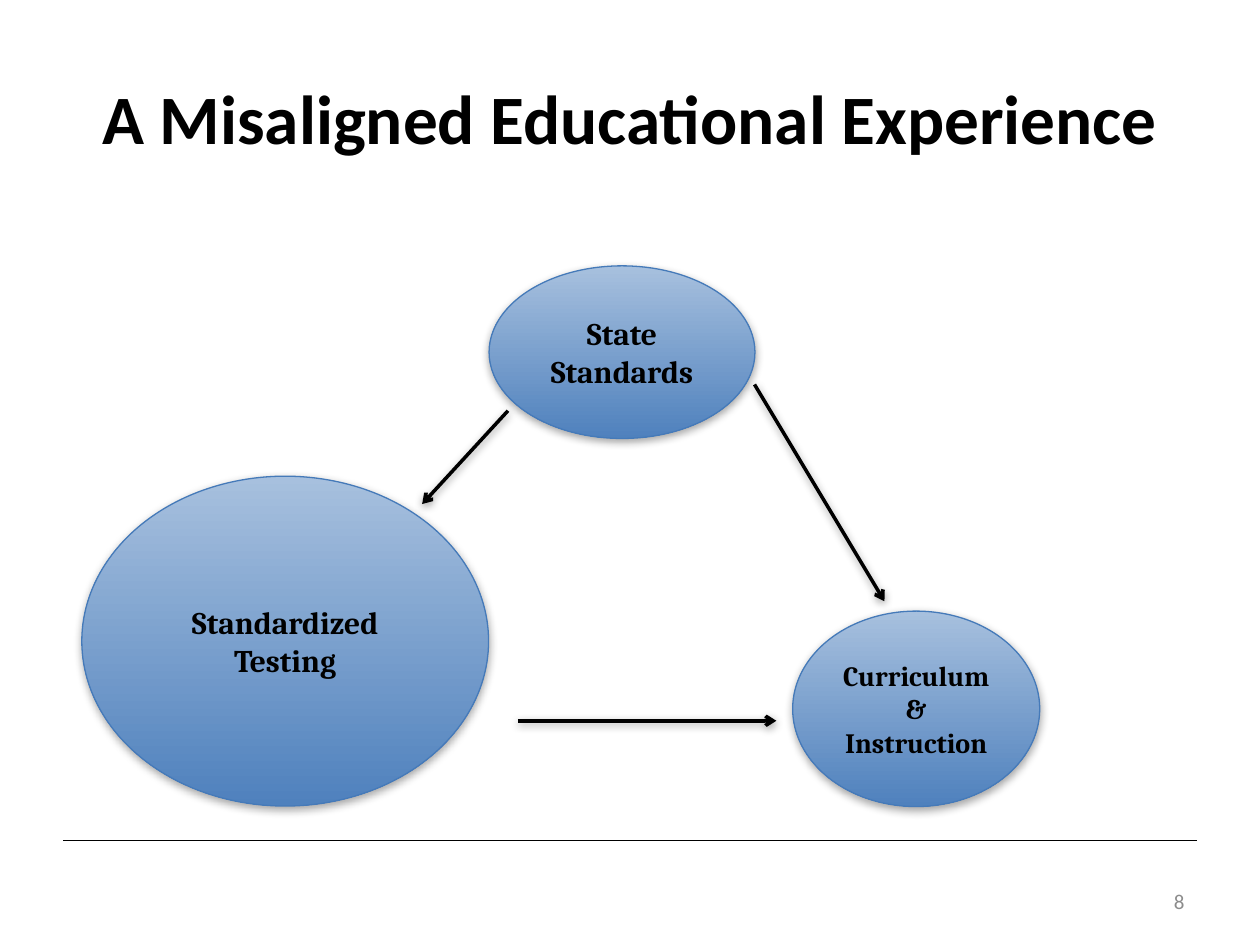
from lxml.etree import SubElement
from pptx import Presentation
from pptx.dml.color import RGBColor
from pptx.enum.shapes import MSO_CONNECTOR, MSO_SHAPE
from pptx.enum.text import MSO_ANCHOR, PP_ALIGN
from pptx.oxml import parse_xml
from pptx.oxml.ns import nsdecls, qn
from pptx.util import Cm, Pt


def style_text(p, align, size, font, color, bold):
    p.alignment = align
    p.font.size = Pt(size)
    p.font.name = font
    p.font.bold = bold
    p.font.color.rgb = RGBColor.from_string(color)


def add_effects(sp, opacity=0, distance=0):
    shadow = (
        f'<a:outerShdw blurRad="{Pt(5)}" dist="{Pt(distance)}" dir="5400000" rotWithShape="0">'
        f'<a:srgbClr val="000000"><a:alpha val="{opacity * 1000}"/></a:srgbClr></a:outerShdw>'
    ) if opacity else ""
    sp.element.spPr.append(parse_xml(f'<a:effectLst {nsdecls("a")}>{shadow}</a:effectLst>'))


prs = Presentation()
prs.slide_width, prs.slide_height = Cm(25.4), Cm(19.05)
s = prs.slides.add_slide(prs.slide_layouts[5])

title = s.shapes.title
title.left, title.top, title.width, title.height = Cm(1.27), Cm(0.76), Cm(22.86), Cm(3.18)
tf = title.text_frame
tf.text = "A Misaligned Educational Experience"
tf.vertical_anchor = MSO_ANCHOR.MIDDLE
style_text(tf.paragraphs[0], PP_ALIGN.CENTER, 39.6, "Calibri", "000000", True)

ellipses = [
    ("State Standards", 18, 9.86, 5.36, 5.36, 3.48),
    ("Curriculum & Instruction", 16, 15.98, 12.32, 4.98, 3.94),
    ("Standardized Testing", 18, 1.65, 9.6, 8.2, 6.65),
]
for text, size, left, top, width, height in ellipses:
    sp = s.shapes.add_shape(MSO_SHAPE.OVAL, Cm(left), Cm(top), Cm(width), Cm(height))
    sp.fill.gradient()
    sp.fill.gradient_angle = 270
    for stop, color, position in zip(sp.fill.gradient_stops, ("A7C0DE", "4F81BD"), (0, 1)):
        stop.color.rgb = RGBColor.from_string(color)
        stop.position = position
    sp.line.color.rgb = RGBColor.from_string("457AB9")
    sp.line.width = Pt(0.75)
    add_effects(sp, 35, 1.8)
    tf = sp.text_frame
    tf.word_wrap = True
    tf.vertical_anchor = MSO_ANCHOR.MIDDLE
    tf.text = text
    p = tf.paragraphs[0]
    p.space_after = Pt(10)
    style_text(p, PP_ALIGN.CENTER, size, "Cambria", "000000", True)

lines = [
    (1.27, 16.94, 24.13, 16.94, 0.5, False),
    (15.21, 7.75, 17.83, 12.12, 2, True),
    (10.44, 14.53, 15.65, 14.53, 2, True),
    (10.24, 8.28, 8.51, 10.16, 2, True),
]
for x1, y1, x2, y2, width, is_arrow in lines:
    line = s.shapes.add_connector(MSO_CONNECTOR.STRAIGHT, Cm(x1), Cm(y1), Cm(x2), Cm(y2))
    line.line.color.rgb = RGBColor.from_string("000000")
    line.line.width = Pt(width)
    if is_arrow:
        SubElement(line.line._get_or_add_ln(), qn("a:tailEnd"), type="arrow")
        add_effects(line, 38, 1.6)
    else:
        add_effects(line)

number = s.shapes.add_textbox(Cm(18.21), Cm(17.65), Cm(5.92), Cm(1.02))
tf = number.text_frame
tf.word_wrap = True
tf.vertical_anchor = MSO_ANCHOR.MIDDLE
tf.text = "8"
style_text(tf.paragraphs[0], PP_ALIGN.RIGHT, 12, "Calibri", "8C8C8C", False)

prs.save("out.pptx")
